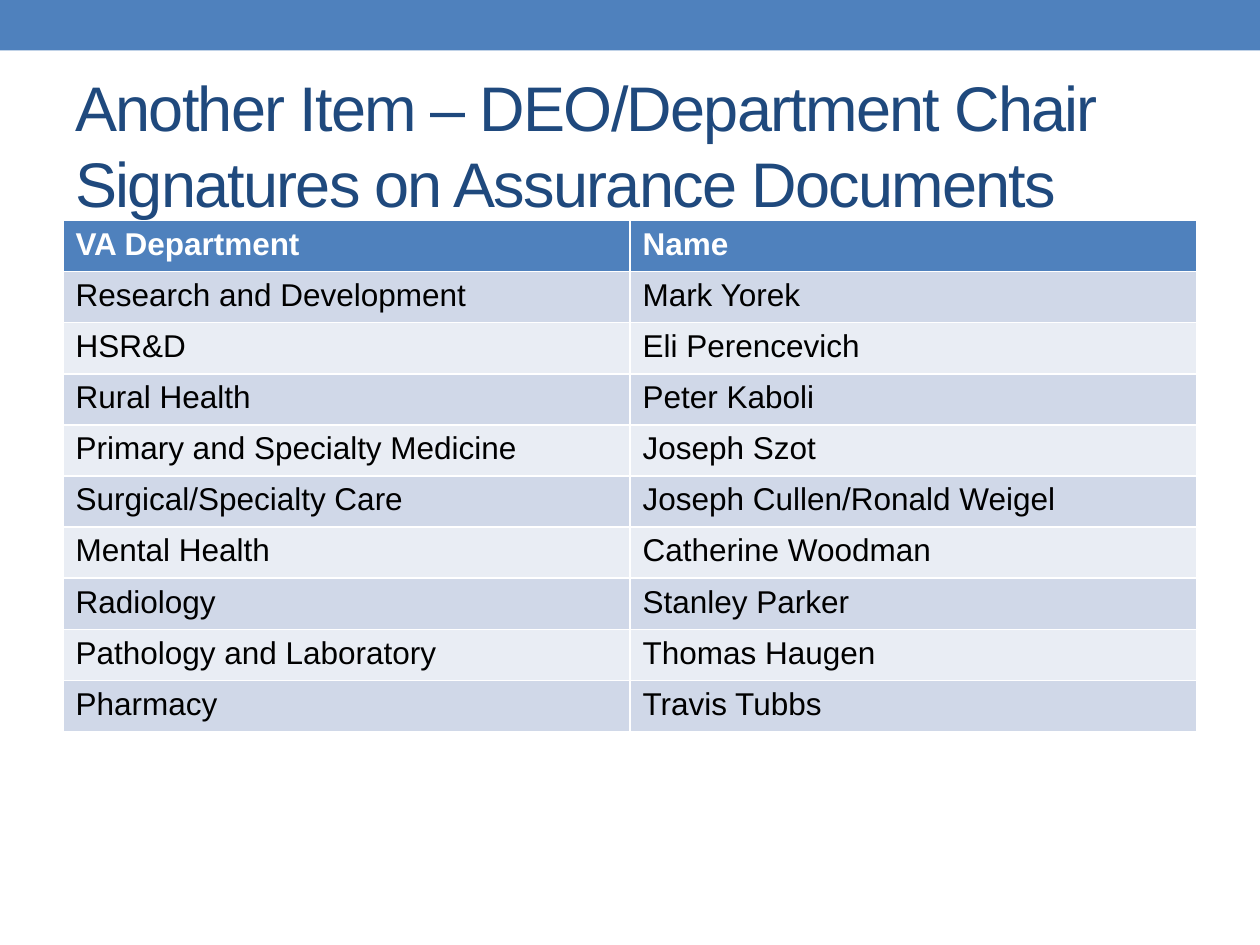
"""Build the slide listing who signs assurance documents for each department."""
from pptx import Presentation
from pptx.dml.color import RGBColor
from pptx.enum.shapes import MSO_SHAPE
from pptx.enum.text import MSO_ANCHOR
from pptx.util import Pt

RECTANGLE = MSO_SHAPE.RECTANGLE
MIDDLE = MSO_ANCHOR.MIDDLE
BLUE = RGBColor(0x4F, 0x81, 0xBD)
NAVY = RGBColor(0x1F, 0x49, 0x7D)
WHITE = RGBColor(0xFF, 0xFF, 0xFF)
BLACK = RGBColor(0x00, 0x00, 0x00)
BANDS = [RGBColor(0xE9, 0xED, 0xF4), RGBColor(0xD0, 0xD8, 0xE8)]

ROWS = [
    ("VA Department", "Name"),
    ("Research and Development", "Mark Yorek"),
    ("HSR&D", "Eli Perencevich"),
    ("Rural Health", "Peter Kaboli"),
    ("Primary and Specialty Medicine", "Joseph Szot"),
    ("Surgical/Specialty Care", "Joseph Cullen/Ronald Weigel"),
    ("Mental Health", "Catherine Woodman"),
    ("Radiology", "Stanley Parker"),
    ("Pathology and Laboratory", "Thomas Haugen"),
    ("Pharmacy", "Travis Tubbs"),
]


def write(tf, text, size=18, color=BLACK, bold=False, spacing=None, leading=None):
    p = tf.paragraphs[0]
    if leading is not None:
        p.line_spacing = Pt(leading)
    r = p.add_run()
    r.text = text
    r.font.name = "Arial"
    r.font.size = Pt(size)
    r.font.bold = bold
    r.font.color.rgb = color
    if spacing is not None:
        r.font._element.set("spc", str(spacing * 100))


prs = Presentation()
prs.slide_width, prs.slide_height = Pt(720), Pt(540)
s = prs.slides.add_slide(prs.slide_layouts[6])

sp = s.shapes.add_shape(RECTANGLE, 0, 0, Pt(720), Pt(28.8))
sp.shadow.inherit = False
sp.fill.solid()
sp.fill.fore_color.rgb = BLUE
sp.line.fill.background()

tf = s.shapes.add_textbox(Pt(36), Pt(41.8), Pt(648), Pt(77.8)).text_frame
tf.word_wrap = True
tf.vertical_anchor = MIDDLE
tf.margin_bottom = 0
write(tf, "Another Item – DEO/Department Chair Signatures on Assurance Documents",
      size=36, color=NAVY, spacing=-1, leading=43)

table = s.shapes.add_table(len(ROWS), 2, Pt(36), Pt(126), Pt(648), Pt(292)).table
for i, row in enumerate(ROWS):
    header = i == 0
    for j, text in enumerate(row):
        cell = table.cell(i, j)
        cell.fill.solid()
        cell.fill.fore_color.rgb = BLUE if header else BANDS[i % 2]
        write(cell.text_frame, text, color=WHITE if header else BLACK, bold=header)

prs.save("out.pptx")
